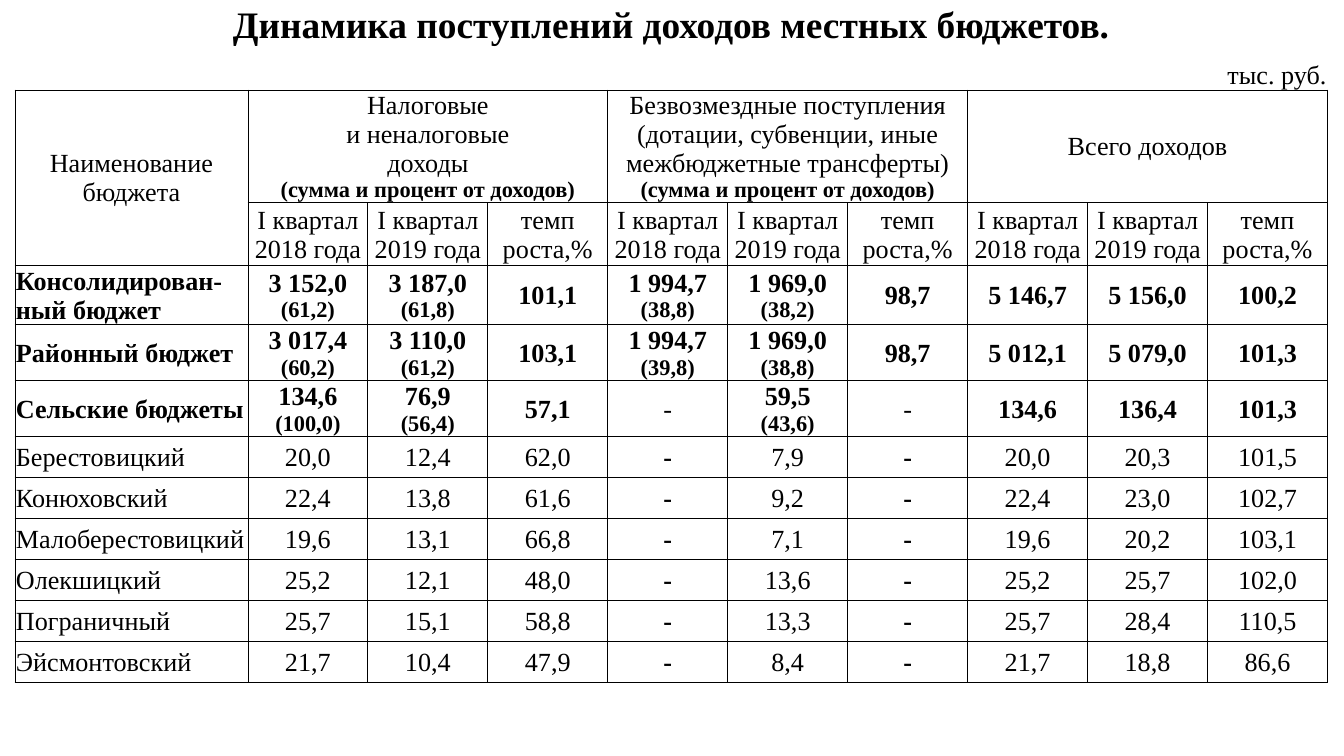
from lxml.etree import SubElement
from pptx import Presentation
from pptx.dml.color import RGBColor
from pptx.enum.text import MSO_ANCHOR, PP_ALIGN
from pptx.oxml.ns import qn
from pptx.util import Emu, Pt

FONT = "Times New Roman"
BLACK = "000000"
NO_STYLE = "{2D5ABB26-0587-4C30-8999-92F81FD0307C}"
COLUMN_WIDTHS = [233] + [120] * 9
ROW_HEIGHTS = [43, 43, 113, 63, 59, 56, 56] + [41] * 6
MERGES = [(0, 0, 0, 9), (1, 1, 1, 2), (1, 3, 1, 4), (1, 5, 1, 6),
          (2, 0, 3, 0), (2, 1, 2, 3), (2, 4, 2, 6), (2, 7, 2, 9)]

TITLE = "Динамика поступлений доходов местных бюджетов."
UNITS = "тыс. руб."
SHARE_NOTE = "(сумма и процент от доходов)"
GROUPS = [
    "Налоговые\nи неналоговые\nдоходы\n" + SHARE_NOTE,
    "Безвозмездные поступления (дотации, субвенции, иные межбюджетные трансферты)\n" + SHARE_NOTE,
    "Всего доходов",
]
PERIODS = ["I квартал 2018 года", "I квартал 2019 года", "темп\nроста,%"]
TOTALS = [
    ["Консолидирован-ный бюджет", "3 152,0\n(61,2)", "3 187,0\n(61,8)", "101,1",
     "1 994,7\n(38,8)", "1 969,0\n(38,2)", "98,7", "5 146,7", "5 156,0", "100,2"],
    ["Районный бюджет", "3 017,4\n(60,2)", "3 110,0\n(61,2)", "103,1",
     "1 994,7\n(39,8)", "1 969,0\n(38,8)", "98,7", "5 012,1", "5 079,0", "101,3"],
    ["Сельские бюджеты", "134,6\n(100,0)", "76,9\n(56,4)", "57,1",
     "-", "59,5\n(43,6)", "-", "134,6", "136,4", "101,3"],
]
VILLAGES = [
    ["Берестовицкий", "20,0", "12,4", "62,0", "-", "7,9", "-", "20,0", "20,3", "101,5"],
    ["Конюховский", "22,4", "13,8", "61,6", "-", "9,2", "-", "22,4", "23,0", "102,7"],
    ["Малоберестовицкий", "19,6", "13,1", "66,8", "-", "7,1", "-", "19,6", "20,2", "103,1"],
    ["Олекшицкий", "25,2", "12,1", "48,0", "-", "13,6", "-", "25,2", "25,7", "102,0"],
    ["Пограничный", "25,7", "15,1", "58,8", "-", "13,3", "-", "25,7", "28,4", "110,5"],
    ["Эйсмонтовский", "21,7", "10,4", "47,9", "-", "8,4", "-", "21,7", "18,8", "86,6"],
]


def px(length):
    """Turn a length in px into EMU."""
    return Emu(round(length * 914400 / 134.4))


def color(value):
    """Turn a hex string into a colour."""
    return RGBColor.from_string(value)


def set_borders(cell, sides):
    """Draw thin black lines on the given sides of a cell."""
    properties = cell._tc.get_or_add_tcPr()
    for side in sides:
        line = SubElement(properties, qn(f"a:ln{side}"), w=str(Pt(0.5)))
        fill = SubElement(line, qn("a:solidFill"))
        SubElement(fill, qn("a:srgbClr"), val=BLACK)


def clear_cell(cell):
    """Give a cell narrow margins, middle anchoring and no fill."""
    cell.margin_left = cell.margin_right = cell.margin_top = px(1)
    cell.margin_bottom = 0
    cell.vertical_anchor = MSO_ANCHOR.MIDDLE
    cell.fill.background()


def write_cell(cell, text, size=14, bold=False, align=PP_ALIGN.CENTER):
    """Write text into a cell, with bracketed shares small and bold."""
    cell.text_frame.text = text
    for paragraph in cell.text_frame.paragraphs:
        paragraph.alignment = align
        is_share = paragraph.text.startswith("(")
        for run in paragraph.runs:
            run.font.name = FONT
            run.font.size = Pt(12 if is_share else size)
            run.font.bold = bold or is_share
            run.font.color.rgb = color(BLACK)


def write_headings(table):
    """Fill the title, units and column heading rows."""
    write_cell(table.cell(0, 0), TITLE, size=20, bold=True)
    write_cell(table.cell(1, 9), UNITS, align=PP_ALIGN.RIGHT)
    for column in (0, 9):
        table.cell(column // 9, column).vertical_anchor = MSO_ANCHOR.BOTTOM
    write_cell(table.cell(2, 0), "Наименование бюджета")
    for index, group in enumerate(GROUPS):
        write_cell(table.cell(2, 1 + 3 * index), group)
    for column in range(9):
        write_cell(table.cell(3, 1 + column), PERIODS[column % 3])


def write_budgets(table, first_row, budgets, bold):
    """Fill one row per budget, with dashes in the opposite weight."""
    for row, values in enumerate(budgets, first_row):
        for column, value in enumerate(values):
            align = PP_ALIGN.CENTER if column else PP_ALIGN.LEFT
            write_cell(table.cell(row, column), value, bold=bold != (value == "-"), align=align)


def add_budget_table(slide, left, top):
    """Place the whole budget table with its top left corner at the given point."""
    frame = slide.shapes.add_table(len(ROW_HEIGHTS), len(COLUMN_WIDTHS), px(left), px(top),
                                   px(sum(COLUMN_WIDTHS)), px(sum(ROW_HEIGHTS)))
    table = frame.table
    table.first_row = table.horz_banding = False
    table._tbl.tblPr.find(qn("a:tableStyleId")).text = NO_STYLE
    for column, width in zip(table.columns, COLUMN_WIDTHS):
        column.width = px(width)
    for index, (row, height) in enumerate(zip(table.rows, ROW_HEIGHTS)):
        row.height = px(height)
        for cell in row.cells:
            set_borders(cell, ("", "B")[index] if index < 2 else "LRTB")
            clear_cell(cell)
    for top_row, first, bottom_row, last in MERGES:
        table.cell(top_row, first).merge(table.cell(bottom_row, last))
    write_headings(table)
    write_budgets(table, 4, TOTALS, bold=True)
    write_budgets(table, 4 + len(TOTALS), VILLAGES, bold=False)


def main():
    """Build the slide and save it."""
    presentation = Presentation()
    presentation.slide_width, presentation.slide_height = px(1344), px(756)
    slide = presentation.slides.add_slide(presentation.slide_layouts[6])
    add_budget_table(slide, 15, 4)
    presentation.save("out.pptx")


if __name__ == "__main__":
    main()
